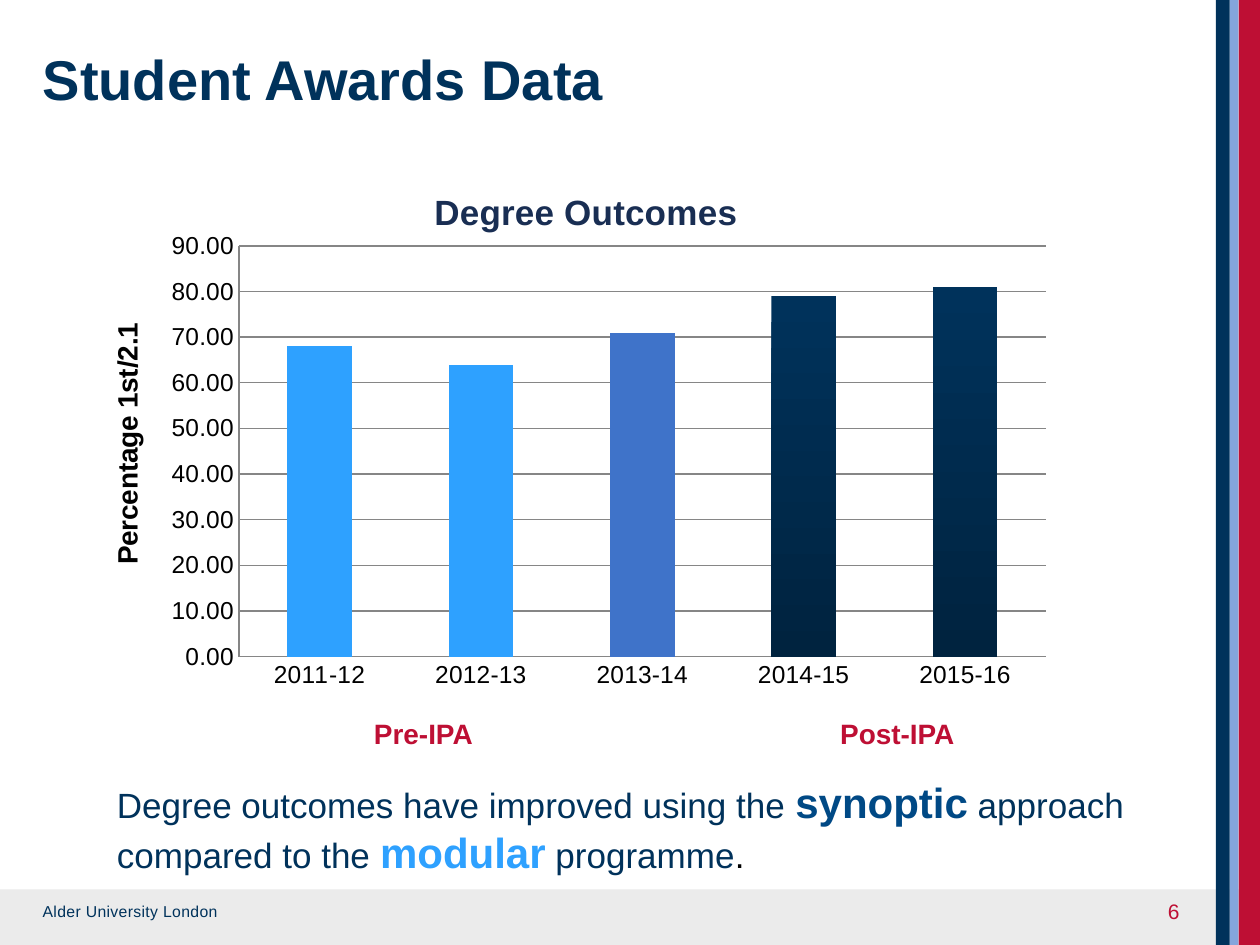
"""Build the student awards slide with its degree outcomes chart."""
from lxml import etree
from pptx import Presentation
from pptx import util as u
from pptx.chart.data import CategoryChartData
from pptx.dml.color import RGBColor
from pptx.enum import chart as ch, shapes, text
from pptx.oxml import parse_xml
from pptx.oxml.ns import nsdecls, qn

NAVY, RED, SKY, BLACK, GREY = "00325B", "BE0F34", "2EA1FF", "000000", "868686"


def rgb(color):
    """Return a colour from its hex string."""
    return RGBColor.from_string(color)


def write(tf, runs, align=text.PP_ALIGN.LEFT):
    """Fill a text frame with (text, size, colour, bold) runs."""
    tf.word_wrap = True
    p = tf.paragraphs[0]
    p.alignment = align
    for words, size, color, bold in runs:
        r = p.add_run()
        r.text = words
        r.font.name, r.font.size, r.font.bold = "Arial", u.Pt(size), bold
        r.font.color.rgb = rgb(color)
    return p


prs = Presentation()
prs.slide_width, prs.slide_height = u.Inches(10), u.Inches(7.5)
s = prs.slides.add_slide(prs.slide_layouts[5])

bands = [
    (0, 7.06, 10, 0.44, "EBEBEB"),
    (9.83, 0, 0.17, 7.5, RED),
    (9.76, 0, 0.07, 7.5, "84A5DC"),
    (9.65, 0, 0.11, 7.5, NAVY),
]
for *box, color in bands:
    sp = s.shapes.add_shape(shapes.MSO_SHAPE.RECTANGLE, *map(u.Inches, box))
    sp.shadow.inherit = False
    sp.fill.solid()
    sp.fill.fore_color.rgb = rgb(color)
    sp.line.fill.background()

title = s.shapes.title
title.left, title.top, title.width, title.height = map(u.Inches, (0.24, 0.3, 9.1, 1.01))
title.text_frame.vertical_anchor = text.MSO_ANCHOR.TOP
title.text_frame.auto_size = text.MSO_AUTO_SIZE.NONE
write(title.text_frame, [("Student Awards Data", 32, NAVY, True)])

footer = s.shapes.add_textbox(*map(u.Inches, (0.24, 7.11, 1.77, 0.25)))
p = write(footer.text_frame, [("Alder University London", 9, NAVY, False)])
p.runs[0]._r.get_or_add_rPr().set("spc", "20")

labels = [
    (2.87, 5.64, 1.26, 0.37, [("Pre-IPA", 16, RED, True)]),
    (6.57, 5.64, 1.26, 0.37, [("Post-IPA", 16, RED, True)]),
    (0.83, 6.11, 8.5, 0.91, [
        ("Degree outcomes have improved using the ", 20, NAVY, False),
        ("synoptic", 24, "004985", True),
        (" ", 20, BLACK, False),
        ("approach compared to the ", 20, NAVY, False),
        ("modular", 24, SKY, True),
        (" ", 20, BLACK, False),
        ("programme", 20, NAVY, False),
        (".", 20, BLACK, False),
    ]),
]
for *box, runs in labels:
    write(s.shapes.add_textbox(*map(u.Inches, box)).text_frame, runs)

number = s.shapes.add_textbox(*map(u.Inches, (7.13, 7.03, 2.33, 0.4)))
number.text_frame.vertical_anchor = text.MSO_ANCHOR.MIDDLE
write(number.text_frame, [("6", 12, RED, False)], text.PP_ALIGN.RIGHT)

data = CategoryChartData(number_format="0.00")
data.categories = ["2011-12", "2012-13", "2013-14", "2014-15", "2015-16"]
data.add_series("Percentage 1st/2.1", [68, 64, 71, 79, 81])
box = map(u.Inches, (0.75, 1.31, 7.8, 4.49))
chart = s.shapes.add_chart(ch.XL_CHART_TYPE.COLUMN_CLUSTERED, *box, data).chart
chart.has_legend = False
chart.font.name, chart.font.size = "Arial", u.Pt(10)
chart.font.color.rgb = rgb(BLACK)
chart.has_title = True
write(chart.chart_title.text_frame, [("Degree Outcomes", 20, "192E53", True)], text.PP_ALIGN.CENTER)
chart.chart_title.include_in_layout = False

plot = chart.plots[0]
plot.gap_width = 150
plot.vary_by_categories = False
series = plot.series[0]
series.format.fill.gradient()
series.format.fill.gradient_angle = 270
for stop, color in zip(series.format.fill.gradient_stops, (NAVY, "00233F")):
    stop.color.rgb = rgb(color)
for i, color in enumerate((SKY, SKY, "3F73C9")):
    fill = series.points[i].format.fill
    fill.solid()
    fill.fore_color.rgb = rgb(color)

val = chart.value_axis
val.minimum_scale, val.maximum_scale, val.major_unit = 0, 90, 10
val.tick_labels.number_format = "0.00"
val.tick_labels.number_format_is_linked = False
val.has_title = True
write(val.axis_title.text_frame, [("Percentage 1st/2.1", 16, BLACK, True)], text.PP_ALIGN.CENTER)
val.axis_title.text_frame._txBody.find(qn("a:bodyPr")).set("rot", "-5400000")
val.has_major_gridlines = True
val.major_gridlines.format.line.color.rgb = rgb(GREY)
for axis in (val, chart.category_axis):
    axis.major_tick_mark = axis.minor_tick_mark = ch.XL_TICK_MARK.NONE
    axis.tick_labels.font.size = u.Pt(14)
    axis.format.line.color.rgb = rgb(GREY)

area = chart._chartSpace.find(".//" + qn("c:plotArea"))
axis_title = area.find(".//" + qn("c:valAx")).find(qn("c:title"))
edges = [("xMode", "edge"), ("yMode", "edge")]
layouts = [
    (area, 0, [("layoutTarget", "inner"), *edges, ("x", 0.147), ("y", 0.143), ("w", 0.821), ("h", 0.726)]),
    (axis_title, 1, [*edges, ("x", 0.01), ("y", 0.27)]),
]
for parent, place, settings in layouts:
    for old in parent.findall(qn("c:layout")):
        parent.remove(old)
    layout = parse_xml(f"<c:layout {nsdecls('c')}><c:manualLayout/></c:layout>")
    for tag, value in settings:
        etree.SubElement(layout[0], qn("c:" + tag)).set("val", str(value))
    parent.insert(place, layout)

prs.save("out.pptx")
